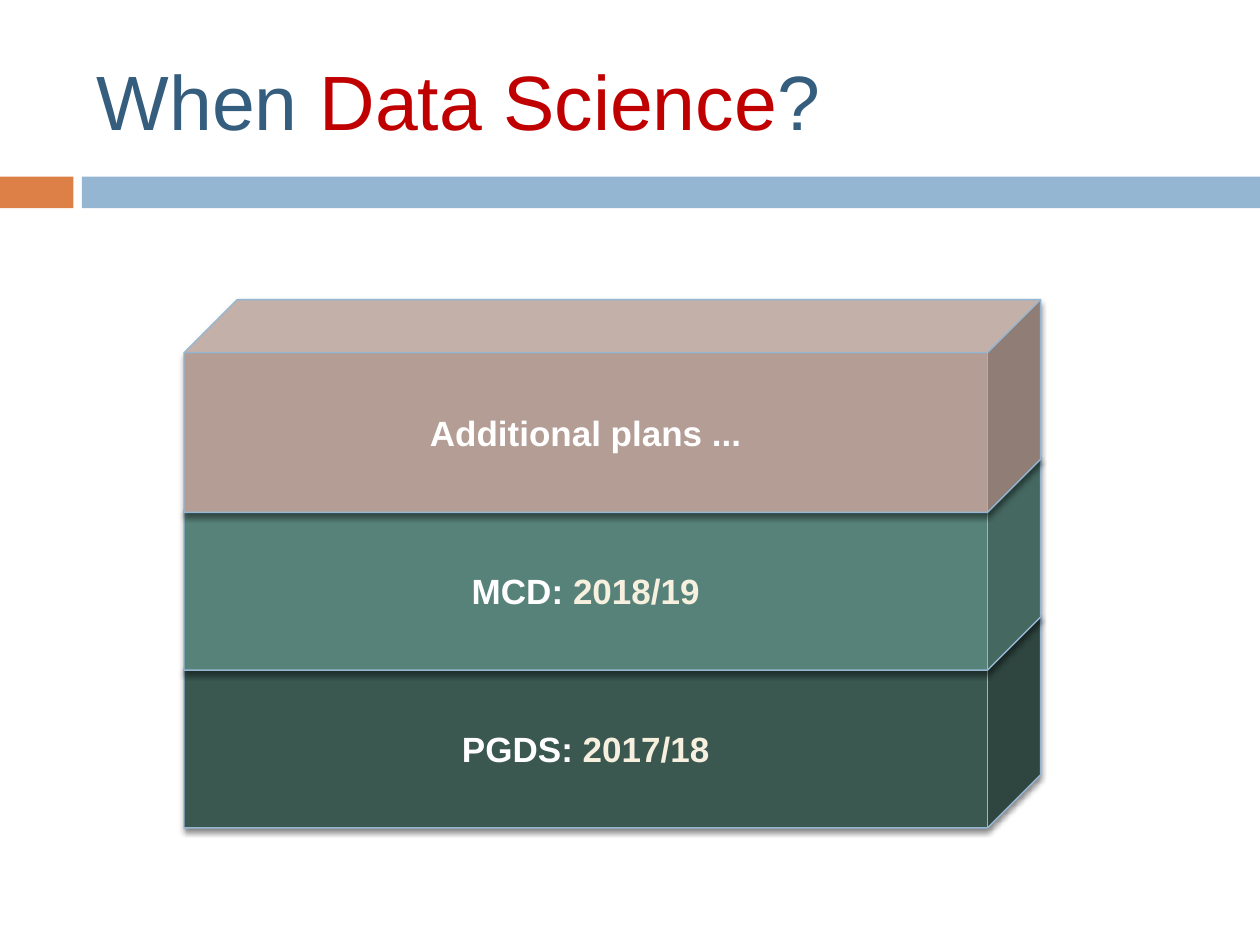
"""Build the slide that stacks the data science programmes by year."""
from dataclasses import dataclass

from lxml.etree import SubElement
from pptx import Presentation
from pptx.dml.color import RGBColor
from pptx.enum.shapes import MSO_SHAPE
from pptx.enum.text import MSO_ANCHOR, PP_ALIGN
from pptx.oxml.ns import qn
from pptx.util import Cm, Pt


@dataclass(frozen=True)
class Theme:
    font: str = "Arial"
    title_size: int = 44
    label_size: int = 20
    title: str = "355D7E"
    highlight: str = "C00000"
    label: str = "FFFFFF"
    year: str = "F7F0DE"
    accent: str = "DD8047"
    band: str = "94B6D2"
    shadow: str = "000000"
    edge_width: float = 0.79


THEME = Theme()

HEADING = [
    ("When ", THEME.title),
    ("Data Science", THEME.highlight),
    ("?", THEME.title),
]
HEADING_BOX = (1.7, 0.64, 22.66, 2.74)
BANDS = [
    ((0, 3.56, 1.48, 0.64), THEME.accent),
    ((1.65, 3.56, 23.75, 0.64), THEME.band),
]
PROGRAMMES = [
    ([("PGDS: ", THEME.label), ("2017/18", THEME.year)], "3A5750"),
    ([("MCD: ", THEME.label), ("2018/19", THEME.year)], "578279"),
    ([("Additional plans ...", THEME.label)], "B39D94"),
]
BLOCK_LEFT, BLOCK_WIDTH, BLOCK_HEIGHT = 3.71, 17.27, 4.29
LOWEST_TOP, BLOCK_STEP = 12.4, 3.18


def write(frame, runs, size, bold=False, align=PP_ALIGN.LEFT):
    frame.word_wrap = True
    frame.vertical_anchor = MSO_ANCHOR.MIDDLE
    paragraph = frame.paragraphs[0]
    paragraph.alignment = align
    for words, color in runs:
        run = paragraph.add_run()
        run.text = words
        run.font.name = THEME.font
        run.font.size = Pt(size)
        run.font.bold = bold
        run.font.color.rgb = RGBColor.from_string(color)


def add_solid(slide, kind, box, color):
    solid = slide.shapes.add_shape(kind, *map(Cm, box))
    solid.shadow.inherit = False
    solid.fill.solid()
    solid.fill.fore_color.rgb = RGBColor.from_string(color)
    solid.line.fill.background()
    return solid


def add_drop_shadow(block):
    effects = block._element.spPr.find(qn("a:effectLst"))
    drop = SubElement(
        effects, qn("a:outerShdw"), blurRad=str(Pt(3)), dist=str(Pt(2.4)),
        dir="5400000", algn="ctr", rotWithShape="0",
    )
    tint = SubElement(drop, qn("a:srgbClr"), val=THEME.shadow)
    SubElement(tint, qn("a:alpha"), val="45000")


def add_programme(slide, level, label, color):
    top = LOWEST_TOP - level * BLOCK_STEP
    box = (BLOCK_LEFT, top, BLOCK_WIDTH, BLOCK_HEIGHT)
    block = add_solid(slide, MSO_SHAPE.CUBE, box, color)
    block.line.color.rgb = RGBColor.from_string(THEME.band)
    block.line.width = Pt(THEME.edge_width)
    add_drop_shadow(block)
    write(block.text_frame, label, THEME.label_size, bold=True, align=PP_ALIGN.CENTER)


def main():
    deck = Presentation()
    deck.slide_width, deck.slide_height = Cm(25.4), Cm(19.05)
    slide = deck.slides.add_slide(deck.slide_layouts[6])
    for box, color in BANDS:
        add_solid(slide, MSO_SHAPE.RECTANGLE, box, color)
    heading = slide.shapes.add_textbox(*map(Cm, HEADING_BOX))
    write(heading.text_frame, HEADING, THEME.title_size)
    for level, (label, color) in enumerate(PROGRAMMES):
        add_programme(slide, level, label, color)
    deck.save("out.pptx")


if __name__ == "__main__":
    main()
